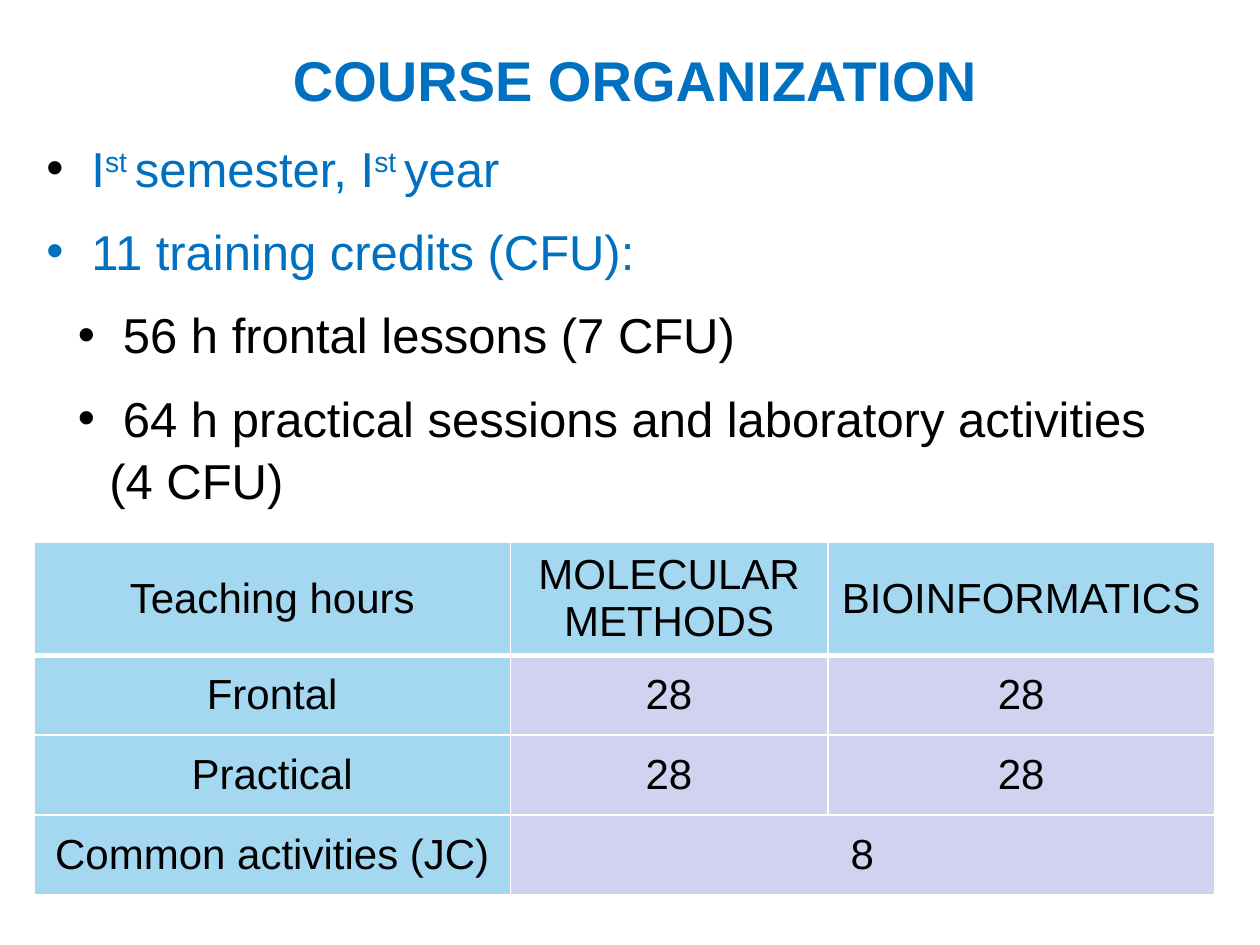
from lxml.etree import SubElement
from pptx import Presentation
from pptx.dml.color import RGBColor
from pptx.enum.text import MSO_ANCHOR as Anchor, PP_ALIGN as Align
from pptx.oxml.ns import qn
from pptx.util import Inches, Pt

BLUE, BLACK, WHITE = "0070C0", "000000", "FFFFFF"
HEADER_FILL, VALUE_FILL = "A4D8F1", "D1D1F0"
LEFT, WIDTH = 0.27, 9.37


def style(para, size, color, bold=False):
    para.font.name = "Arial"
    para.font.size = Pt(size)
    para.font.bold = bold
    para.font.color.rgb = RGBColor.from_string(color)


def add_border(cell, side, width):
    """Draw a white line on one side (lnL, lnR, lnT or lnB) of a table cell."""
    line = SubElement(cell._tc.get_or_add_tcPr(), qn(f"a:{side}"), w=str(Pt(width)))
    SubElement(SubElement(line, qn("a:solidFill")), qn("a:srgbClr"), val=WHITE)


deck = Presentation()
deck.slide_width, deck.slide_height = Inches(10), Inches(7.5)
page = deck.slides.add_slide(deck.slide_layouts[6])

# Title
title = page.shapes.add_textbox(Inches(0.04), Inches(0.26), Inches(10), Inches(0.81))
title.text_frame.word_wrap = True
para = title.text_frame.paragraphs[0]
para.text = "COURSE ORGANIZATION"
para.alignment = Align.CENTER
para.line_spacing = 1.1
style(para, 32, BLUE, bold=True)

# Bulleted facts: level, text colour, bullet colour, runs (every second run is raised)
facts = [
    (0, BLUE, BLACK, [" I", "st ", "semester, I", "st ", "year"]),
    (0, BLUE, BLUE, [" 11 training credits (CFU):"]),
    (1, BLACK, BLACK, [" 56 h frontal lessons (7 CFU)"]),
    (1, BLACK, BLACK, [" 64 h practical sessions and laboratory activities (4 CFU)"]),
]
body = page.shapes.add_textbox(Inches(LEFT), Inches(1.02), Inches(WIDTH), Inches(7.44))
frame = body.text_frame
frame.word_wrap = True
for index, (level, color, bullet_color, texts) in enumerate(facts):
    para = frame.add_paragraph() if index else frame.paragraphs[0]
    para.level = level
    para.line_spacing = 1.06
    para.space_after = Pt(12)
    props = para._p.get_or_add_pPr()
    props.set("marL", str(Inches(0.25 * (level + 1))))
    props.set("indent", str(-Inches(0.25)))
    SubElement(SubElement(props, qn("a:buClr")), qn("a:srgbClr"), val=bullet_color)
    SubElement(props, qn("a:buFont"), typeface="Arial")
    SubElement(props, qn("a:buChar"), char="•")
    style(para, 28, color)
    for position, text in enumerate(texts):
        span = para.add_run()
        span.text = text
        if position % 2:
            span.font._element.set("baseline", "30000")

# Teaching hours
hours = [
    ["Teaching hours", "MOLECULAR METHODS", "BIOINFORMATICS"],
    ["Frontal", "28", "28"],
    ["Practical", "28", "28"],
    ["Common activities (JC)", "8", ""],
]
column_widths = [3.78, 2.52, 3.07]
row_heights = [0.89, 0.635, 0.635, 0.635]
table = page.shapes.add_table(
    len(hours), len(column_widths), Inches(LEFT), Inches(4.3),
    Inches(WIDTH), Inches(sum(row_heights))).table
for column, width in zip(table.columns, column_widths):
    column.width = Inches(width)
for row, height in zip(table.rows, row_heights):
    row.height = Inches(height)
table.cell(3, 1).merge(table.cell(3, 2))

for r, texts in enumerate(hours):
    for c, text in enumerate(texts):
        cell = table.cell(r, c)
        cell.vertical_anchor = Anchor.MIDDLE
        for side in ("lnL", "lnR", "lnT", "lnB"):
            heavy = (r, side) in [(0, "lnB"), (1, "lnT")]
            add_border(cell, side, 3 if heavy else 1)
        cell.fill.solid()
        fill = HEADER_FILL if r == 0 or c == 0 else VALUE_FILL
        cell.fill.fore_color.rgb = RGBColor.from_string(fill)
        para = cell.text_frame.paragraphs[0]
        para.text = text
        para.alignment = Align.CENTER
        style(para, 24, BLACK)

deck.save("out.pptx")
